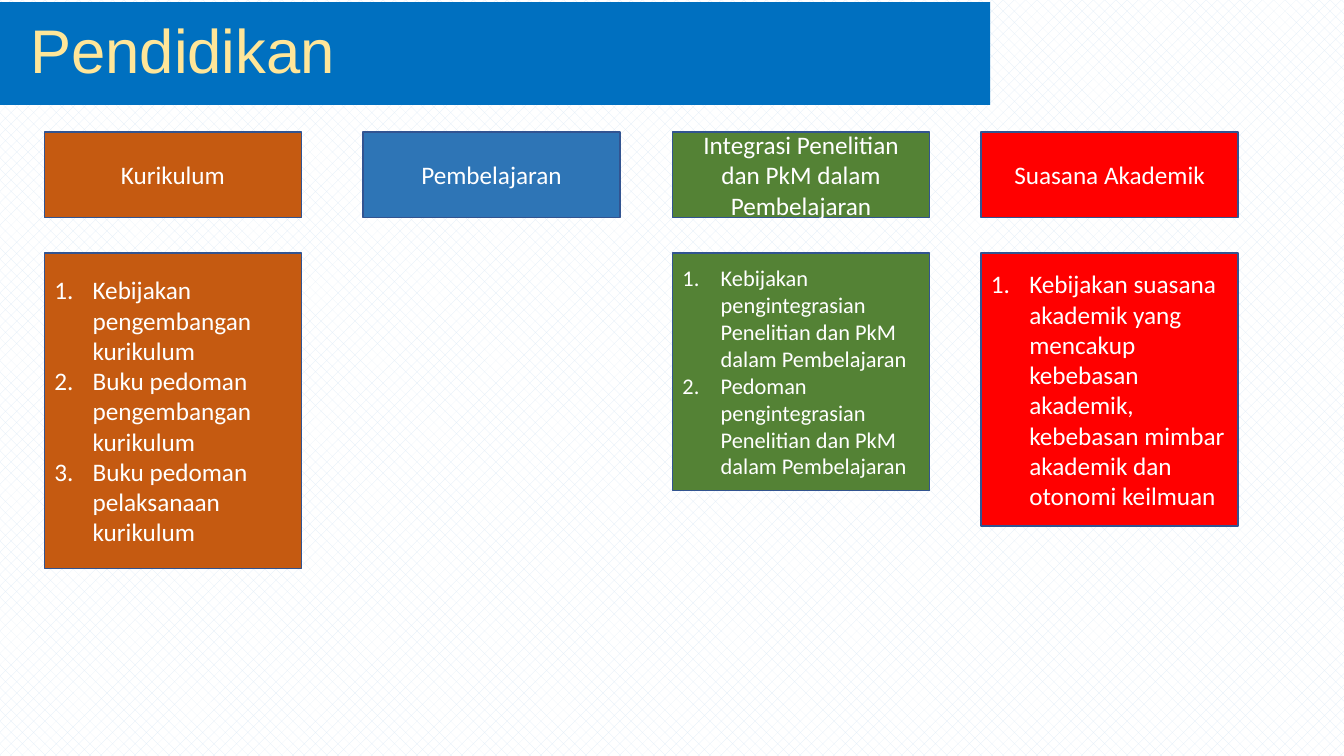
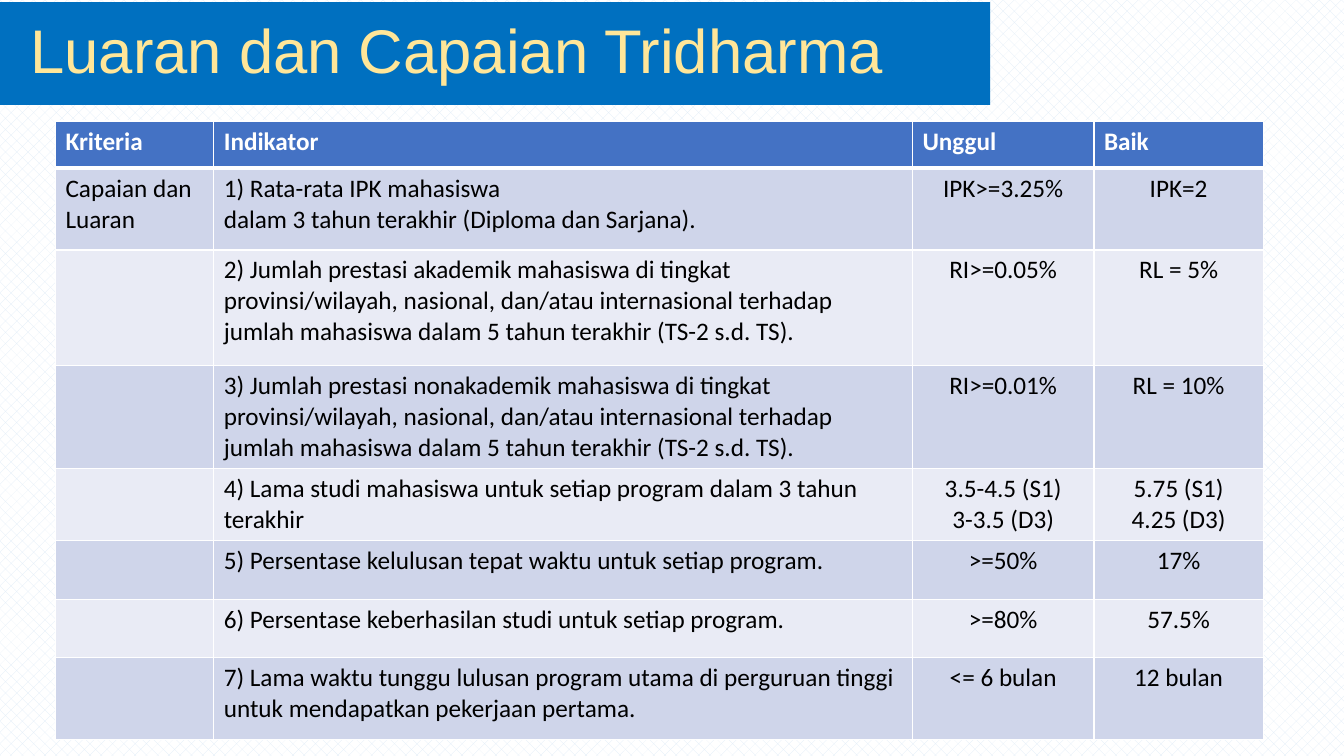
"""Builds two slides on education criteria and tridharma outcomes."""
from lxml import etree
from pptx import Presentation
from pptx import util as u
from pptx.dml.color import RGBColor
from pptx.enum import dml, shapes, text
from pptx.oxml import ns

THEME = {
    "band": "0070C0", "title": "FFE699", "white": "FFFFFF", "black": "000000",
    "hatch": "DEEBF7", "outline": "325491", "header": "4472C4",
    "rows": ("CFD5EA", "E9EBF5"),
    "title_font": "Arial", "body_font": "Calibri",
    "title_size": 44, "body_size": 18, "small_size": 16,
}
SLIDE_SIZE = (13.33, 7.5)
BAND = (0, 0.02, 9.82, 1.02)
BOX_WIDTH, HEAD_TOP, HEAD_HEIGHT, LIST_TOP = 2.55, 1.31, 0.85, 2.51
TITLE_INDENT, LIST_INDENT = 0.2, 0.38

TOPICS = [
    {"name": "Kurikulum", "color": "C55A11", "left": 0.44, "height": 3.13, "size": "body_size",
     "items": ["Kebijakan pengembangan kurikulum",
               "Buku pedoman pengembangan kurikulum",
               "Buku pedoman pelaksanaan kurikulum"]},
    {"name": "Pembelajaran", "color": "2E75B6", "left": 3.6, "items": []},
    {"name": "Integrasi Penelitian dan PkM dalam Pembelajaran", "color": "548235",
     "left": 6.67, "height": 2.36, "size": "small_size",
     "items": ["Kebijakan pengintegrasian Penelitian dan PkM dalam Pembelajaran",
               "Pedoman pengintegrasian Penelitian dan PkM dalam Pembelajaran"]},
    {"name": "Suasana Akademik", "color": "FF0000", "left": 9.73, "height": 2.71,
     "size": "body_size",
     "items": ["Kebijakan suasana akademik yang mencakup kebebasan akademik, "
               "kebebasan mimbar akademik dan otonomi keilmuan"]},
]

TABLE_AT = (0.55, 1.2)
COLUMNS = (1.57, 6.93, 1.8, 1.68)
ROWS = (0.47, 0.81, 1.15, 1.01, 0.72, 0.58, 0.58, 0.81)
CELLS = [
    ("Kriteria", "Indikator", "Unggul", "Baik"),
    ("Capaian dan Luaran",
     "1) Rata-rata IPK mahasiswa\ndalam 3 tahun terakhir (Diploma dan Sarjana).",
     "IPK>=3.25%", "IPK=2"),
    ("", "2) Jumlah prestasi akademik mahasiswa di tingkat provinsi/wilayah, nasional, "
     "dan/atau internasional terhadap\njumlah mahasiswa dalam 5 tahun terakhir (TS-2 s.d. TS).",
     "RI>=0.05%", "RL = 5%"),
    ("", "3) Jumlah prestasi nonakademik mahasiswa di tingkat provinsi/wilayah, nasional, "
     "dan/atau internasional terhadap\njumlah mahasiswa dalam 5 tahun terakhir (TS-2 s.d. TS).",
     "RI>=0.01%", "RL = 10%"),
    ("", "4) Lama studi mahasiswa untuk setiap program dalam 3 tahun terakhir",
     "3.5-4.5 (S1)\n3-3.5 (D3)", "5.75 (S1)\n4.25 (D3)"),
    ("", "5) Persentase kelulusan tepat waktu untuk setiap program.", ">=50%", "17%"),
    ("", "6) Persentase keberhasilan studi untuk setiap program.", ">=80%", "57.5%"),
    ("", "7) Lama waktu tunggu lulusan program utama di perguruan tinggi "
     "untuk mendapatkan pekerjaan pertama.", "<= 6 bulan", "12 bulan"),
]


def apply(target, values):
    for name, value in values.items():
        setattr(target, name, value)


def paint(fill, color):
    fill.solid()
    fill.fore_color.rgb = RGBColor.from_string(color)


def style(para, color, size="body_size", font="body_font", align=text.PP_ALIGN.LEFT, bold=False):
    para.alignment = align
    apply(para.font, {"name": THEME[font], "size": u.Pt(THEME[size]), "bold": bold})
    para.font.color.rgb = RGBColor.from_string(color)


def indent(para, left, hanging=0):
    properties = para._p.get_or_add_pPr()
    properties.set("marL", str(u.Inches(left)))
    properties.set("indent", str(-u.Inches(hanging)))
    return properties


def add_page(deck, heading):
    page = deck.slides.add_slide(deck.slide_layouts[5])
    title = page.shapes.title
    apply(title, dict(zip(("left", "top", "width", "height"), map(u.Inches, BAND))))
    paint(title.fill, THEME["band"])
    title.text_frame.text = heading
    apply(title.text_frame, {"word_wrap": True, "auto_size": text.MSO_AUTO_SIZE.NONE,
                             "vertical_anchor": text.MSO_ANCHOR.MIDDLE})
    para = title.text_frame.paragraphs[0]
    indent(para, TITLE_INDENT)
    para.line_spacing = 0.9
    style(para, THEME["title"], "title_size", "title_font")
    return page


def add_box(page, left, top, height, color, lines):
    box = page.shapes.add_shape(shapes.MSO_SHAPE.RECTANGLE,
                                *map(u.Inches, (left, top, BOX_WIDTH, height)))
    box.shadow.inherit = False
    paint(box.fill, color)
    paint(box.line.fill, THEME["outline"])
    box.line.width = u.Pt(1)
    apply(box.text_frame, {"text": "\n".join(lines), "word_wrap": True,
                           "vertical_anchor": text.MSO_ANCHOR.MIDDLE})
    return box.text_frame.paragraphs


def add_topic(page, topic):
    left, color = topic["left"], topic["color"]
    for para in add_box(page, left, HEAD_TOP, HEAD_HEIGHT, color, [topic["name"]]):
        style(para, THEME["white"], align=text.PP_ALIGN.CENTER)
    if topic["items"]:
        for para in add_box(page, left, LIST_TOP, topic["height"], color, topic["items"]):
            properties = indent(para, LIST_INDENT, LIST_INDENT)
            etree.SubElement(properties, ns.qn("a:buFont"), typeface="+mj-lt")
            etree.SubElement(properties, ns.qn("a:buAutoNum"), type="arabicPeriod")
            style(para, THEME["white"], topic["size"])


def add_borders(cell, widths):
    properties = cell._tc.get_or_add_tcPr()
    for side, width in widths.items():
        line = etree.SubElement(properties, ns.qn(f"a:ln{side}"), w=str(u.Pt(width)))
        solid = etree.SubElement(line, ns.qn("a:solidFill"))
        etree.SubElement(solid, ns.qn("a:srgbClr"), val=THEME["white"])


def add_indicators(page):
    extent = (*TABLE_AT, sum(COLUMNS), sum(ROWS))
    table = page.shapes.add_table(len(ROWS), len(COLUMNS), *map(u.Inches, extent)).table
    for column, width in zip(table.columns, COLUMNS):
        column.width = u.Inches(width)
    for row, height in zip(table.rows, ROWS):
        row.height = u.Inches(height)
    for r, values in enumerate(CELLS):
        header = r == 0
        fill = THEME["header"] if header else THEME["rows"][(r - 1) % 2]
        color = THEME["white"] if header else THEME["black"]
        for c, value in enumerate(values):
            cell = table.cell(r, c)
            add_borders(cell, {"L": 1, "R": 1, "T": 3 if r == 1 else 1, "B": 3 if header else 1})
            paint(cell.fill, fill)
            cell.text = value
            centred = not header and c > 1
            align = text.PP_ALIGN.CENTER if centred else text.PP_ALIGN.LEFT
            for para in cell.text_frame.paragraphs:
                style(para, color, align=align, bold=header)


def main():
    deck = Presentation()
    deck.slide_width, deck.slide_height = map(u.Inches, SLIDE_SIZE)
    backdrop = deck.slide_master.background.fill
    backdrop.patterned()
    backdrop.pattern = dml.MSO_PATTERN.PERCENT_25
    backdrop.fore_color.rgb = RGBColor.from_string(THEME["hatch"])
    backdrop.back_color.rgb = RGBColor.from_string(THEME["white"])
    page = add_page(deck, "Pendidikan")
    for topic in TOPICS:
        add_topic(page, topic)
    add_indicators(add_page(deck, "Luaran dan Capaian Tridharma"))
    deck.save("out.pptx")


if __name__ == "__main__":
    main()
